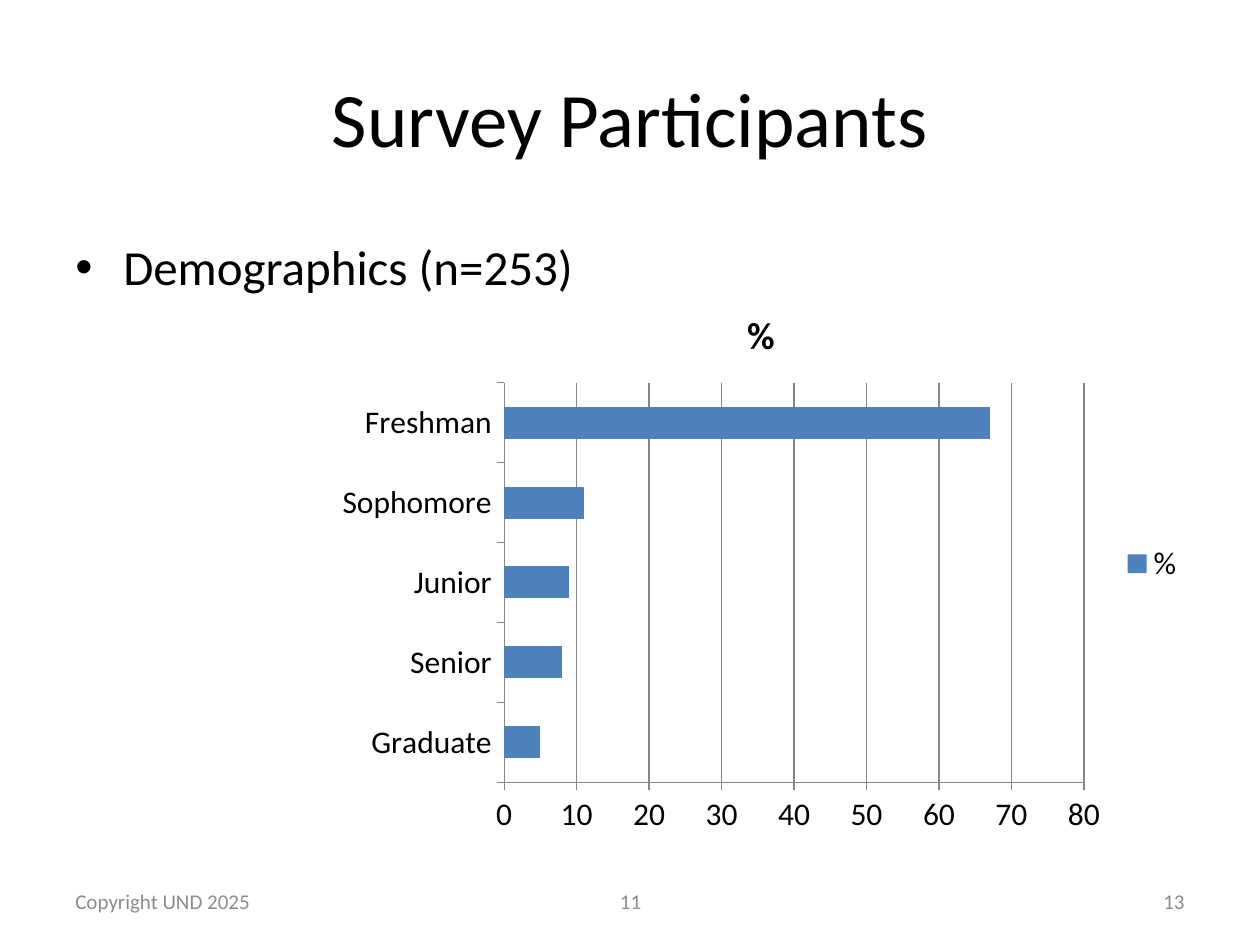
from dataclasses import dataclass

from lxml import etree
from pptx import Presentation
from pptx.chart.data import CategoryChartData
from pptx.dml.color import RGBColor
from pptx.enum.chart import XL_CHART_TYPE, XL_LEGEND_POSITION, XL_TICK_MARK
from pptx.enum.text import MSO_ANCHOR, PP_ALIGN
from pptx.oxml.ns import qn
from pptx.slide import Slide
from pptx.util import Inches, Pt

BAR = XL_CHART_TYPE.BAR_CLUSTERED
LEGEND_RIGHT = XL_LEGEND_POSITION.RIGHT
TICK_OUT, TICK_NONE = XL_TICK_MARK.OUTSIDE, XL_TICK_MARK.NONE
TOP, MIDDLE = MSO_ANCHOR.TOP, MSO_ANCHOR.MIDDLE
LEFT, CENTER, RIGHT = PP_ALIGN.LEFT, PP_ALIGN.CENTER, PP_ALIGN.RIGHT


@dataclass(frozen=True)
class Theme:
    font: str = "Calibri"
    ink: RGBColor = RGBColor(0, 0, 0)
    muted: RGBColor = RGBColor(0x8C, 0x8C, 0x8C)
    axis: RGBColor = RGBColor(0x86, 0x86, 0x86)
    bar: RGBColor = RGBColor(0x4F, 0x81, 0xBD)
    title: float = 44
    body: float = 28
    chart_title: float = 21.6
    chart: float = 18
    footer: float = 12


THEME = Theme()


@dataclass(frozen=True)
class Label:
    text: str
    left: float
    top: float
    width: float
    height: float
    size: float
    color: RGBColor = THEME.ink
    align: PP_ALIGN = LEFT
    anchor: MSO_ANCHOR = MIDDLE
    bullet: bool = False


def footer(text: str, left: float, width: float, align: PP_ALIGN) -> Label:
    return Label(text, left, 6.95, width, 0.4, THEME.footer, THEME.muted, align)


LABELS = [
    Label("Survey Participants", 0.5, 0.3, 9, 1.25, THEME.title, align=CENTER),
    Label("Demographics (n=253)", 0.5, 1.83, 4.42, 4.95, THEME.body,
          anchor=TOP, bullet=True),
    footer("Copyright UND 2025", 0.5, 2.33, LEFT),
    footer("11", 3.42, 3.17, CENTER),
    footer("13", 7.17, 2.33, RIGHT),
]

SHARES = {"Graduate": 5, "Senior": 8, "Junior": 9, "Sophomore": 11, "Freshman": 67}


def style_font(font, size: float, color: RGBColor) -> None:
    font.name = THEME.font
    font.size = Pt(size)
    font.color.rgb = color


def add_label(s: Slide, label: Label) -> None:
    sp = s.shapes.add_textbox(Inches(label.left), Inches(label.top),
                              Inches(label.width), Inches(label.height))
    tf = sp.text_frame
    tf.word_wrap = True
    tf.vertical_anchor = label.anchor
    p = tf.paragraphs[0]
    p.alignment = label.align
    if label.bullet:
        pPr = p._p.get_or_add_pPr()
        pPr.set("marL", str(Inches(0.38)))
        pPr.set("indent", str(-Inches(0.38)))
        etree.SubElement(pPr, qn("a:buFont")).set("typeface", "Arial")
        etree.SubElement(pPr, qn("a:buChar")).set("char", "•")
    r = p.add_run()
    r.text = label.text
    style_font(r.font, label.size, label.color)


def add_share_chart(s: Slide) -> None:
    data = CategoryChartData()
    data.categories = list(SHARES)
    data.add_series("%", list(SHARES.values()))
    chart = s.shapes.add_chart(BAR, Inches(2.58), Inches(2.25),
                               Inches(6.92), Inches(4.45), data).chart
    style_font(chart.font, THEME.chart, THEME.ink)

    chart.has_title = True
    r = chart.chart_title.text_frame.paragraphs[0].add_run()
    r.text = "%"
    style_font(r.font, THEME.chart_title, THEME.ink)
    r.font.bold = True

    chart.has_legend = True
    chart.legend.position = LEGEND_RIGHT
    chart.legend.include_in_layout = False

    plot = chart.plots[0]
    plot.gap_width = 150
    plot.vary_by_categories = False
    fill = plot.series[0].format.fill
    fill.solid()
    fill.fore_color.rgb = THEME.bar

    values = chart.value_axis
    values.minimum_scale, values.maximum_scale, values.major_unit = 0, 80, 10
    values.has_major_gridlines = True
    for axis in (chart.category_axis, values):
        axis.major_tick_mark = TICK_OUT
        axis.minor_tick_mark = TICK_NONE
    for part in (chart.category_axis, values, values.major_gridlines):
        part.format.line.color.rgb = THEME.axis
        part.format.line.width = Pt(0.75)


def main() -> None:
    prs = Presentation()
    prs.slide_width, prs.slide_height = Inches(10), Inches(7.5)
    s = prs.slides.add_slide(prs.slide_layouts[6])
    for label in LABELS:
        add_label(s, label)
    add_share_chart(s)
    prs.save("out.pptx")


if __name__ == "__main__":
    main()
